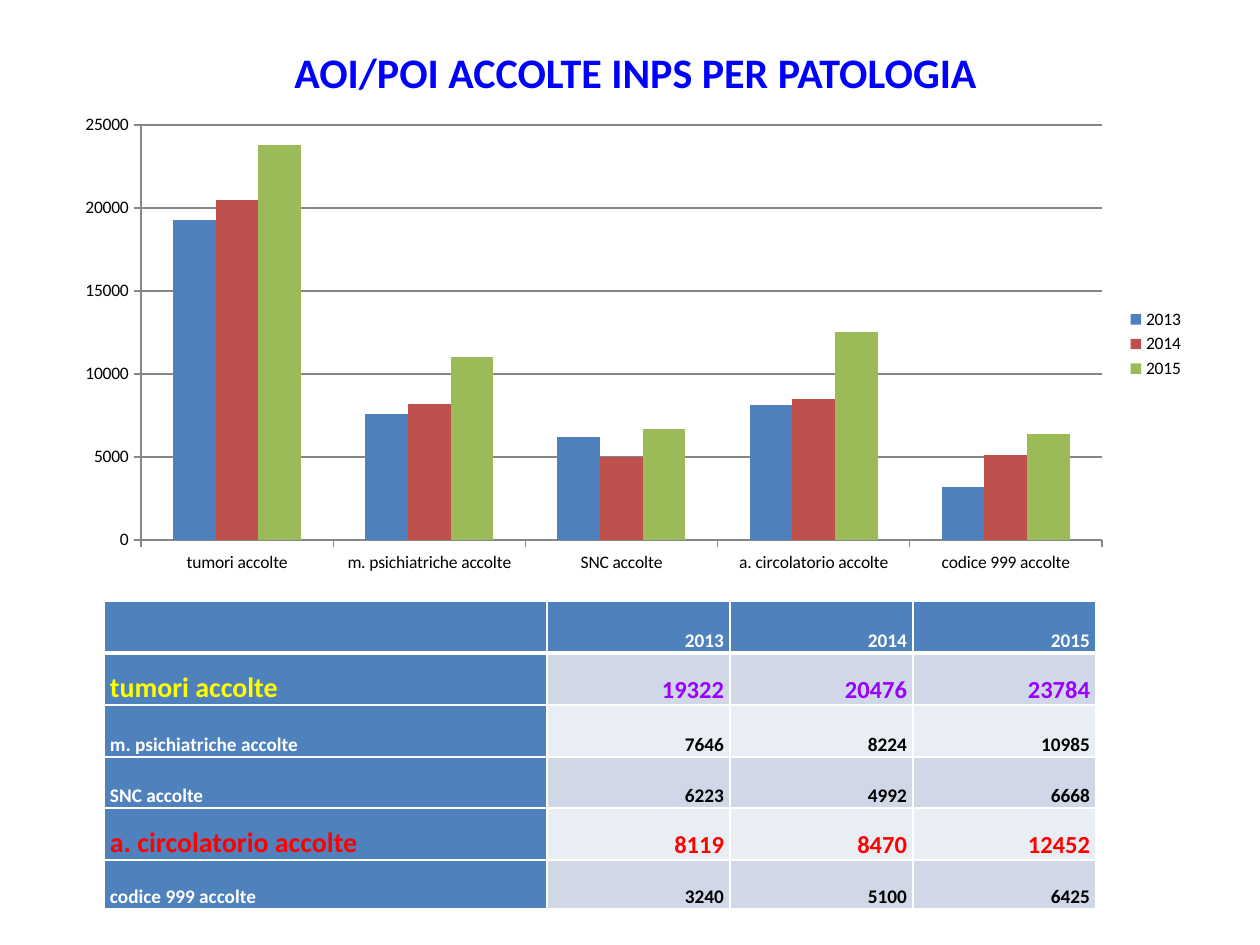
from dataclasses import dataclass

from lxml.etree import SubElement
from pptx import Presentation
from pptx.chart.data import CategoryChartData
from pptx.dml.color import RGBColor as RGB
from pptx.enum.chart import XL_CHART_TYPE as Kind
from pptx.enum.chart import XL_LEGEND_POSITION as Side
from pptx.enum.chart import XL_TICK_MARK as Tick
from pptx.enum.text import MSO_ANCHOR as Anchor
from pptx.enum.text import PP_ALIGN as Align
from pptx.oxml.ns import qn
from pptx.util import Emu, Pt

SCALE = 914400 / 126
FONT = "Calibri"
WHITE = RGB(0xFF, 0xFF, 0xFF)
BLACK = RGB(0x00, 0x00, 0x00)
BLUE = RGB(0x00, 0x00, 0xFF)
RED = RGB(0xFF, 0x00, 0x00)
YELLOW = RGB(0xFF, 0xFF, 0x00)
PURPLE = RGB(0x99, 0x00, 0xFF)
GREY = RGB(0x86, 0x86, 0x86)
STEEL = RGB(0x4F, 0x81, 0xBD)
BRICK = RGB(0xC0, 0x50, 0x4D)
OLIVE = RGB(0x9B, 0xBB, 0x59)
BANDS = RGB(0xD0, 0xD8, 0xE8), RGB(0xE9, 0xED, 0xF4)

YEARS = ("2013", "2014", "2015")
HUES = (STEEL, BRICK, OLIVE)
COLS = (443, 183, 183, 183)
TOPS = (601, 653, 705, 757, 808, 860, 909)


@dataclass(frozen=True)
class Row:
    name: str
    counts: tuple[int, int, int]
    name_hue: RGB = WHITE
    hue: RGB = BLACK
    name_size: int = 11
    size: int = 11


@dataclass(frozen=True)
class Box:
    left: int
    top: int
    width: int
    height: int

    def emu(self) -> tuple[Emu, ...]:
        return tuple(map(px, (self.left, self.top, self.width, self.height)))


ROWS = (
    Row("tumori accolte", (19322, 20476, 23784), YELLOW, PURPLE, 16, 14),
    Row("m. psichiatriche accolte", (7646, 8224, 10985)),
    Row("SNC accolte", (6223, 4992, 6668)),
    Row("a. circolatorio accolte", (8119, 8470, 12452), RED, RED, 16, 14),
    Row("codice 999 accolte", (3240, 5100, 6425)),
)
TITLE = Box(74, 38, 1123, 68)
CHART = Box(63, 106, 1134, 476)
PLOT = Box(141, 125, 961, 415)
TABLE = Box(104, TOPS[0], sum(COLS), TOPS[-1] - TOPS[0])


def px(count: int) -> Emu:
    return Emu(round(count * SCALE))


def apply(item, **format) -> None:
    for key, value in format.items():
        setattr(item, key, value)


def style(font, size: int, hue: RGB, bold: bool = False) -> None:
    apply(font, name=FONT, size=Pt(size), bold=bold)
    font.color.rgb = hue


def add_title(slide) -> None:
    shape = slide.shapes.title
    left, top, width, height = TITLE.emu()
    apply(shape, left=left, top=top, width=width, height=height)
    frame = shape.text_frame
    frame.text = "AOI/POI ACCOLTE INPS PER PATOLOGIA"
    apply(frame, vertical_anchor=Anchor.MIDDLE, word_wrap=True)
    para = frame.paragraphs[0]
    para.alignment = Align.CENTER
    style(para.runs[0].font, 24, BLUE, True)


def fix_plot(chart) -> None:
    """Pin the inner plot area to PLOT, as fractions of the chart."""
    area = chart._chartSpace.chart.plotArea
    for old in area.findall(qn("c:layout")):
        area.remove(old)
    layout = SubElement(area, qn("c:layout"))
    area.insert(0, layout)
    manual = SubElement(layout, qn("c:manualLayout"))
    parts = {
        "layoutTarget": "inner", "xMode": "edge", "yMode": "edge",
        "x": round((PLOT.left - CHART.left) / CHART.width, 4),
        "y": round((PLOT.top - CHART.top) / CHART.height, 4),
        "w": round(PLOT.width / CHART.width, 4),
        "h": round(PLOT.height / CHART.height, 4),
    }
    for tag, value in parts.items():
        SubElement(manual, qn(f"c:{tag}")).set("val", str(value))


def add_chart(slide) -> None:
    data = CategoryChartData()
    data.categories = [row.name for row in ROWS]
    for year, counts in zip(YEARS, zip(*(row.counts for row in ROWS))):
        data.add_series(year, [round(count, -2) for count in counts])
    chart = slide.shapes.add_chart(Kind.COLUMN_CLUSTERED, *CHART.emu(), data).chart
    apply(chart, has_title=False, has_legend=True)
    style(chart.font, 10, BLACK)
    apply(chart.legend, position=Side.RIGHT, include_in_layout=False)
    plot = chart.plots[0]
    apply(plot, gap_width=150, overlap=0, vary_by_categories=False)
    for series, hue in zip(plot.series, HUES):
        series.format.fill.solid()
        series.format.fill.fore_color.rgb = hue
    base, scale = chart.category_axis, chart.value_axis
    apply(scale, minimum_scale=0, maximum_scale=25000, major_unit=5000,
          has_major_gridlines=True)
    for axis in (base, scale):
        apply(axis, major_tick_mark=Tick.OUTSIDE, minor_tick_mark=Tick.NONE)
    for part in (base, scale, scale.major_gridlines):
        part.format.line.color.rgb = GREY
        part.format.line.width = Pt(0.75)
    fix_plot(chart)


def add_edge(cell, side: str, points: int) -> None:
    line = SubElement(cell._tc.get_or_add_tcPr(), qn(f"a:ln{side}"))
    line.set("w", str(Pt(points)))
    fill = SubElement(line, qn("a:solidFill"))
    SubElement(fill, qn("a:srgbClr")).set("val", str(WHITE))


def fill_cell(cell, text: str, size: int, hue: RGB, back: RGB,
              align: Align, edges: dict[str, int]) -> None:
    for side, points in edges.items():
        add_edge(cell, side, points)
    cell.fill.solid()
    cell.fill.fore_color.rgb = back
    apply(cell, vertical_anchor=Anchor.BOTTOM, margin_left=px(6),
          margin_right=px(6), margin_top=0, margin_bottom=0)
    para = cell.text_frame.paragraphs[0]
    apply(para, alignment=align, line_spacing=1.15)
    if text:
        run = para.add_run()
        run.text = text
        style(run.font, size, hue, True)


def add_table(slide) -> None:
    table = slide.shapes.add_table(len(ROWS) + 1, len(COLS), *TABLE.emu()).table
    for col, width in zip(table.columns, COLS):
        col.width = px(width)
    for row, top, end in zip(table.rows, TOPS, TOPS[1:]):
        row.height = px(end - top)
    thin = {"L": 1, "R": 1, "T": 1, "B": 1}
    for c, text in enumerate(("", *YEARS)):
        fill_cell(table.cell(0, c), text, 11, WHITE, STEEL, Align.RIGHT,
                  thin | {"B": 3})
    for r, row in enumerate(ROWS, 1):
        edges = thin | {"T": 3} if r == 1 else thin
        fill_cell(table.cell(r, 0), row.name, row.name_size, row.name_hue,
                  STEEL, Align.LEFT, edges)
        for c, count in enumerate(row.counts, 1):
            fill_cell(table.cell(r, c), str(count), row.size, row.hue,
                      BANDS[(r - 1) % 2], Align.RIGHT, edges)


def main() -> None:
    deck = Presentation()
    apply(deck, slide_width=px(1260), slide_height=px(945))
    slide = deck.slides.add_slide(deck.slide_layouts[5])
    add_title(slide)
    add_chart(slide)
    add_table(slide)
    deck.save("out.pptx")


if __name__ == "__main__":
    main()
